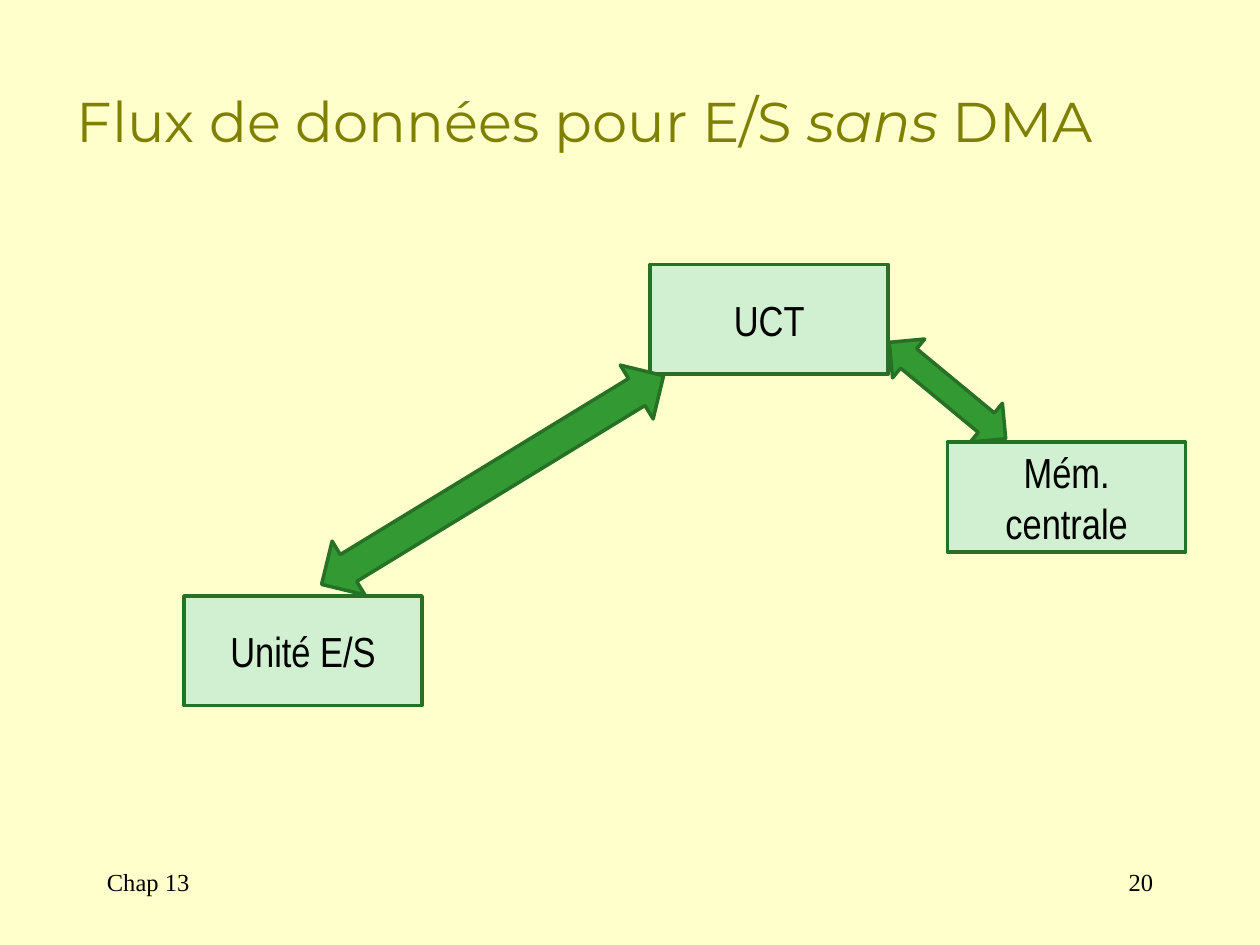
from pptx import Presentation
from pptx.dml.color import RGBColor
from pptx.enum.shapes import MSO_SHAPE
from pptx.enum.text import MSO_ANCHOR, PP_ALIGN
from pptx.util import Inches, Pt

COLORS = {"background": "FFFFCC", "title": "808000", "text": "000000",
          "box": "D1F0D1", "arrow": "339933", "outline": "267126"}

# Content: title runs are (text, italic)
TITLE = [("Flux de données pour E/S ", False), ("sans", True), (" DMA", False)]
FOOTERS = [("Chap 13", 0.75, PP_ALIGN.LEFT), ("20", 7.17, PP_ALIGN.RIGHT)]
BOX_W, BOX_H = 1.89, 0.87
BOXES = [("UCT", 5.16, 2.1), ("Unité E/S", 1.46, 4.73), ("Mém. centrale", 7.52, 3.51)]
# Arrows: left, top, width, height, rotation
ARROWS = [(6.92, 2.9, 1.2, 0.4, 39.6), (2.32, 3.56, 3.18, 0.5, 328.6)]


def rgb(name):
    return RGBColor.from_string(COLORS[name])


def style_runs(p, size, font, color):
    for r in p.runs:
        r.font.size = Pt(size)
        r.font.name = font
        r.font.color.rgb = rgb(color)


def add_text(s, left, top, width, height):
    tf = s.shapes.add_textbox(*map(Inches, (left, top, width, height))).text_frame
    tf.word_wrap = True
    return tf


def add_part(s, kind, fill, left, top, width, height):
    sp = s.shapes.add_shape(kind, *map(Inches, (left, top, width, height)))
    sp.shadow.inherit = False
    sp.fill.solid()
    sp.fill.fore_color.rgb = rgb(fill)
    sp.line.color.rgb = rgb("outline")
    sp.line.width = Pt(2)
    return sp


def main():
    prs = Presentation()
    prs.slide_width, prs.slide_height = Inches(10), Inches(7.5)
    s = prs.slides.add_slide(prs.slide_layouts[6])
    s.background.fill.solid()
    s.background.fill.fore_color.rgb = rgb("background")

    # Title
    tf = add_text(s, 0.51, 0.33, 8.9, 1.25)
    tf.vertical_anchor = MSO_ANCHOR.MIDDLE
    p = tf.paragraphs[0]
    for text, italic in TITLE:
        r = p.add_run()
        r.text = text
        r.font.italic = italic
    style_runs(p, 32, "Montserrat", "title")

    # Footer and page number
    for text, left, align in FOOTERS:
        p = add_text(s, left, 6.83, 2.08, 0.5).paragraphs[0]
        p.text = text
        p.alignment = align
        style_runs(p, 14, "Times New Roman", "text")

    # Component boxes
    for text, left, top in BOXES:
        sp = add_part(s, MSO_SHAPE.RECTANGLE, "box", left, top, BOX_W, BOX_H)
        tf = sp.text_frame
        tf.word_wrap = True
        tf.vertical_anchor = MSO_ANCHOR.MIDDLE
        p = tf.paragraphs[0]
        p.text = text
        p.alignment = PP_ALIGN.CENTER
        style_runs(p, 24, "Arial Narrow", "text")

    # Data flow arrows
    for *place, angle in ARROWS:
        add_part(s, MSO_SHAPE.LEFT_RIGHT_ARROW, "arrow", *place).rotation = angle

    prs.save("out.pptx")


if __name__ == "__main__":
    main()
